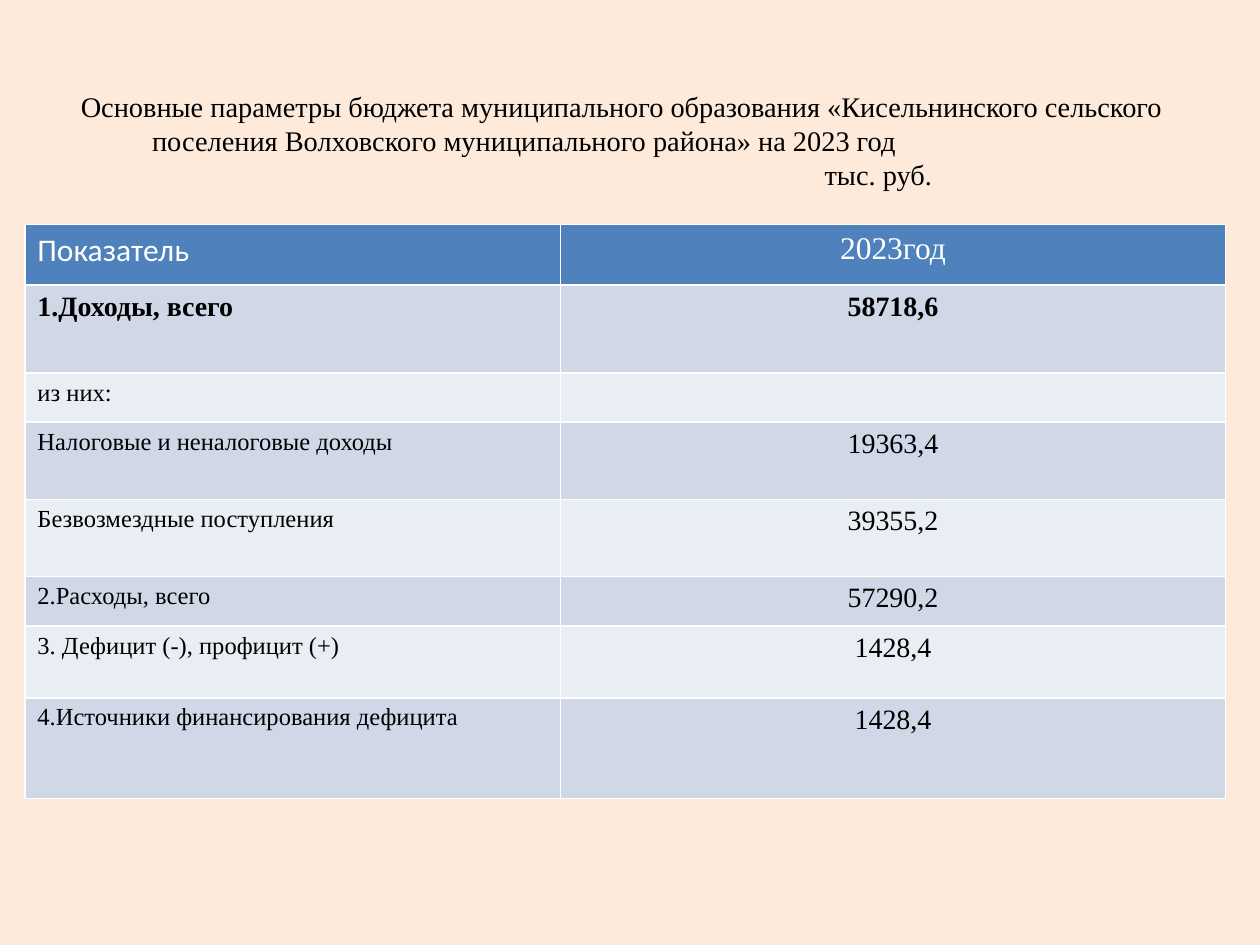
import pptx
import pptx.util
import pptx.dml.color
import pptx.enum.text

Pt = pptx.util.Pt
RGBColor = pptx.dml.color.RGBColor
ALIGN = pptx.enum.text.PP_ALIGN
ANCHOR = pptx.enum.text.MSO_ANCHOR

PEACH = RGBColor(0xFD, 0xEA, 0xDA)
BLACK = RGBColor(0x00, 0x00, 0x00)
WHITE = RGBColor(0xFF, 0xFF, 0xFF)
HEADER_BLUE = RGBColor(0x4F, 0x81, 0xBD)
BANDS = (RGBColor(0xD0, 0xD8, 0xE8), RGBColor(0xE9, 0xED, 0xF4))
SERIF = "Times New Roman"

# Content: title lines are (text, alignment, left indent)
TITLE_LINES = [
    ("Основные параметры бюджета муниципального образования «Кисельнинского сельского", ALIGN.CENTER, 0),
    ("поселения Волховского муниципального района» на 2023 год", ALIGN.LEFT, 48.7),
    ("тыс. руб.", ALIGN.LEFT, 433),
]
# Table rows are (indicator, value, height)
ROWS = [
    ("Показатель", "2023год", 34.5),
    ("1.Доходы, всего", "58718,6", 50.3),
    ("из них:", "", 28),
    ("Налоговые и неналоговые доходы", "19363,4", 44.3),
    ("Безвозмездные поступления", "39355,2", 44),
    ("2.Расходы, всего", "57290,2", 28.3),
    ("3. Дефицит (-), профицит (+)", "1428,4", 41),
    ("4.Источники финансирования дефицита", "1428,4", 57.6),
]
COLUMN_WIDTHS = (306, 380.2)
TOTAL_ROW = 1


def add_span(para, text, color, **formats):
    span = para.add_run()
    span.text = text
    span.font.color.rgb = color
    for name, value in formats.items():
        setattr(span.font, name, value)


def cell_format(row, column):
    """Return the text colour and font values for a table cell."""
    if row == 0:
        return WHITE, {"name": SERIF if column else "Calibri", "size": Pt(18), "bold": False}
    large = row == TOTAL_ROW or (column == 1 and ROWS[row][column])
    return BLACK, {"name": SERIF, "size": Pt(16 if large else 14), "bold": row == TOTAL_ROW}


deck = pptx.Presentation()
deck.slide_width, deck.slide_height = Pt(720), Pt(540)
page = deck.slides.add_slide(deck.slide_layouts[5])
page.background.fill.solid()
page.background.fill.fore_color.rgb = PEACH

# Title
title = page.shapes.title
title.left, title.top, title.width, title.height = Pt(31), Pt(37.5), Pt(648), Pt(85)
frame = title.text_frame
frame.word_wrap = True
frame.vertical_anchor = ANCHOR.MIDDLE
for index, (text, alignment, indent) in enumerate(TITLE_LINES):
    para = frame.add_paragraph() if index else frame.paragraphs[0]
    para.alignment = alignment
    para.line_spacing = Pt(19.4)
    para._p.get_or_add_pPr().set("marL", str(Pt(indent)))
    add_span(para, text, BLACK, name=SERIF, size=Pt(16.2))

# Budget table
table = page.shapes.add_table(
    len(ROWS), len(COLUMN_WIDTHS), Pt(14.2), Pt(128.4),
    Pt(sum(COLUMN_WIDTHS)), Pt(sum(height for *_, height in ROWS)),
).table
for column, width in zip(table.columns, COLUMN_WIDTHS):
    column.width = Pt(width)
for row, (*texts, height) in enumerate(ROWS):
    table.rows[row].height = Pt(height)
    for column, text in enumerate(texts):
        cell = table.cell(row, column)
        cell.fill.solid()
        cell.fill.fore_color.rgb = BANDS[(row - 1) % 2] if row else HEADER_BLUE
        para = cell.text_frame.paragraphs[0]
        para.alignment = ALIGN.CENTER if column else ALIGN.LEFT
        color, formats = cell_format(row, column)
        add_span(para, text, color, **formats)

deck.save("out.pptx")
